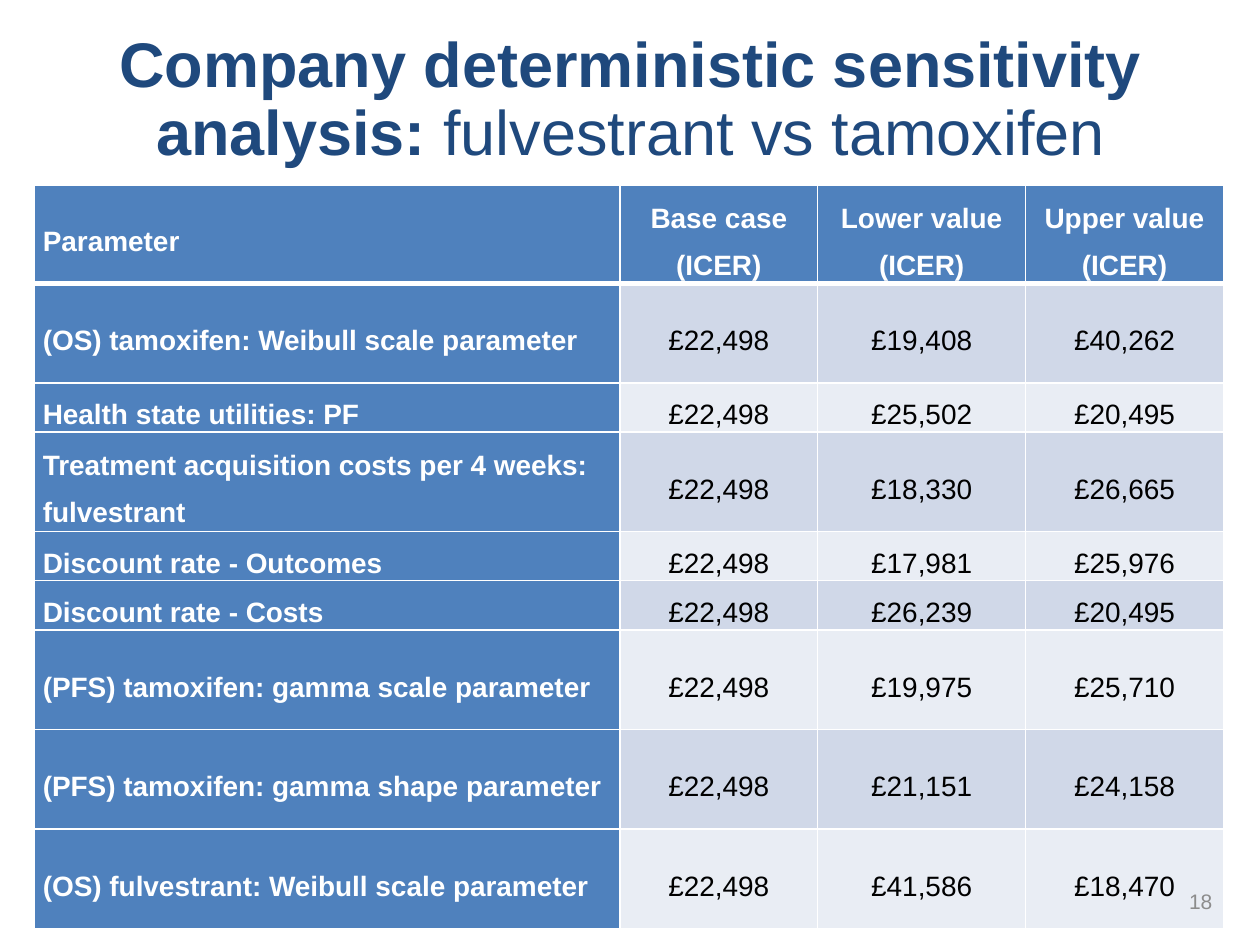
from lxml import etree
from pptx import Presentation
from pptx.dml.color import RGBColor
from pptx.enum.text import MSO_ANCHOR, PP_ALIGN
from pptx.oxml.ns import qn
from pptx.util import Inches, Pt

MIDDLE = MSO_ANCHOR.MIDDLE
LEFT, CENTER, RIGHT = PP_ALIGN.LEFT, PP_ALIGN.CENTER, PP_ALIGN.RIGHT
TITLE_ONLY = 5

FONT = "Arial"
NAVY, BLUE, WHITE, BLACK, GREY = "1F497D", "4F81BD", "FFFFFF", "000000", "8C8C8C"
BANDS = ("D0D8E8", "E9EDF4")

BASE_CASE = "£22,498"
HEADINGS = ("Parameter", "Base case (ICER)", "Lower value (ICER)", "Upper value (ICER)")
# parameter, ICER at lower value, ICER at upper value, height in text lines
SENSITIVITIES = (
    ("(OS) tamoxifen: Weibull scale parameter", "£19,408", "£40,262", 2),
    ("Health state utilities: PF", "£25,502", "£20,495", 1),
    ("Treatment acquisition costs per 4 weeks: fulvestrant", "£18,330", "£26,665", 2),
    ("Discount rate - Outcomes", "£17,981", "£25,976", 1),
    ("Discount rate - Costs", "£26,239", "£20,495", 1),
    ("(PFS) tamoxifen: gamma scale parameter", "£19,975", "£25,710", 2),
    ("(PFS) tamoxifen: gamma shape parameter", "£21,151", "£24,158", 2),
    ("(OS) fulvestrant: Weibull scale parameter", "£41,586", "£18,470", 2),
)
COLUMN_WIDTHS = (4.65, 1.57, 1.65, 1.57)
ROW_HEIGHTS = {1: 0.39, 2: 0.79}
HEADER_HEIGHT = 0.78


def color(hex_value):
    return RGBColor.from_string(hex_value)


def style_run(run, size, hex_value, bold=False):
    font = run.font
    font.name, font.size, font.bold = FONT, Pt(size), bold
    font.color.rgb = color(hex_value)


def place(shape, left, top, width, height):
    shape.left, shape.top = Inches(left), Inches(top)
    shape.width, shape.height = Inches(width), Inches(height)


def set_borders(cell, top, bottom):
    """Draw white cell edges; top and bottom are widths in points."""
    properties = cell._tc.get_or_add_tcPr()
    for edge, width in (("L", 1), ("R", 1), ("T", top), ("B", bottom)):
        line = etree.SubElement(properties, qn(f"a:ln{edge}"), w=str(Pt(width)))
        fill = etree.SubElement(line, qn("a:solidFill"))
        etree.SubElement(fill, qn("a:srgbClr"), val=WHITE)


def fill_cell(cell, text, row, column):
    is_label = row == 0 or column == 0
    set_borders(cell, top=3 if row == 1 else 1, bottom=3 if row == 0 else 1)
    cell.fill.solid()
    cell.fill.fore_color.rgb = color(BLUE if is_label else BANDS[(row - 1) % 2])
    cell.margin_left = cell.margin_right = Inches(0.07)
    cell.margin_top = cell.margin_bottom = 0
    cell.vertical_anchor = MIDDLE
    cell.text = text
    paragraph = cell.text_frame.paragraphs[0]
    paragraph.alignment = CENTER if column else LEFT
    paragraph.line_spacing = 1.5
    style_run(paragraph.runs[0], 16, WHITE if is_label else BLACK, is_label)


def add_title(slide):
    title = slide.shapes.title
    place(title, 0.28, 0.29, 9.45, 1.03)
    title.text_frame.vertical_anchor = MIDDLE
    title.text_frame.word_wrap = True
    paragraph = title.text_frame.paragraphs[0]
    paragraph.alignment, paragraph.line_spacing = CENTER, 0.9
    for text, bold in (
        ("Company deterministic sensitivity analysis:", True),
        (" fulvestrant vs tamoxifen", False),
    ):
        run = paragraph.add_run()
        run.text = text
        style_run(run, 36, NAVY, bold)


def add_icer_table(slide):
    contents = [HEADINGS]
    heights = [HEADER_HEIGHT]
    for parameter, lower, upper, lines in SENSITIVITIES:
        contents.append((parameter, BASE_CASE, lower, upper))
        heights.append(ROW_HEIGHTS[lines])
    table = slide.shapes.add_table(
        len(contents), len(HEADINGS), Inches(0.27), Inches(1.47),
        Inches(sum(COLUMN_WIDTHS)), Inches(sum(heights)),
    ).table
    for column, width in zip(table.columns, COLUMN_WIDTHS):
        column.width = Inches(width)
    for row, (texts, height) in enumerate(zip(contents, heights)):
        table.rows[row].height = Inches(height)
        for column, text in enumerate(texts):
            fill_cell(table.cell(row, column), text, row, column)


def add_page_number(slide, number):
    box = slide.shapes.add_textbox(Inches(7.47), Inches(6.95), Inches(2.25), Inches(0.4))
    frame = box.text_frame
    frame.word_wrap = True
    frame.vertical_anchor = MIDDLE
    frame.text = number
    frame.paragraphs[0].alignment = RIGHT
    style_run(frame.paragraphs[0].runs[0], 12, GREY)


def main():
    presentation = Presentation()
    presentation.slide_width, presentation.slide_height = Inches(10), Inches(7.5)
    slide = presentation.slides.add_slide(presentation.slide_layouts[TITLE_ONLY])
    add_title(slide)
    add_icer_table(slide)
    add_page_number(slide, "18")
    presentation.save("out.pptx")


if __name__ == "__main__":
    main()
